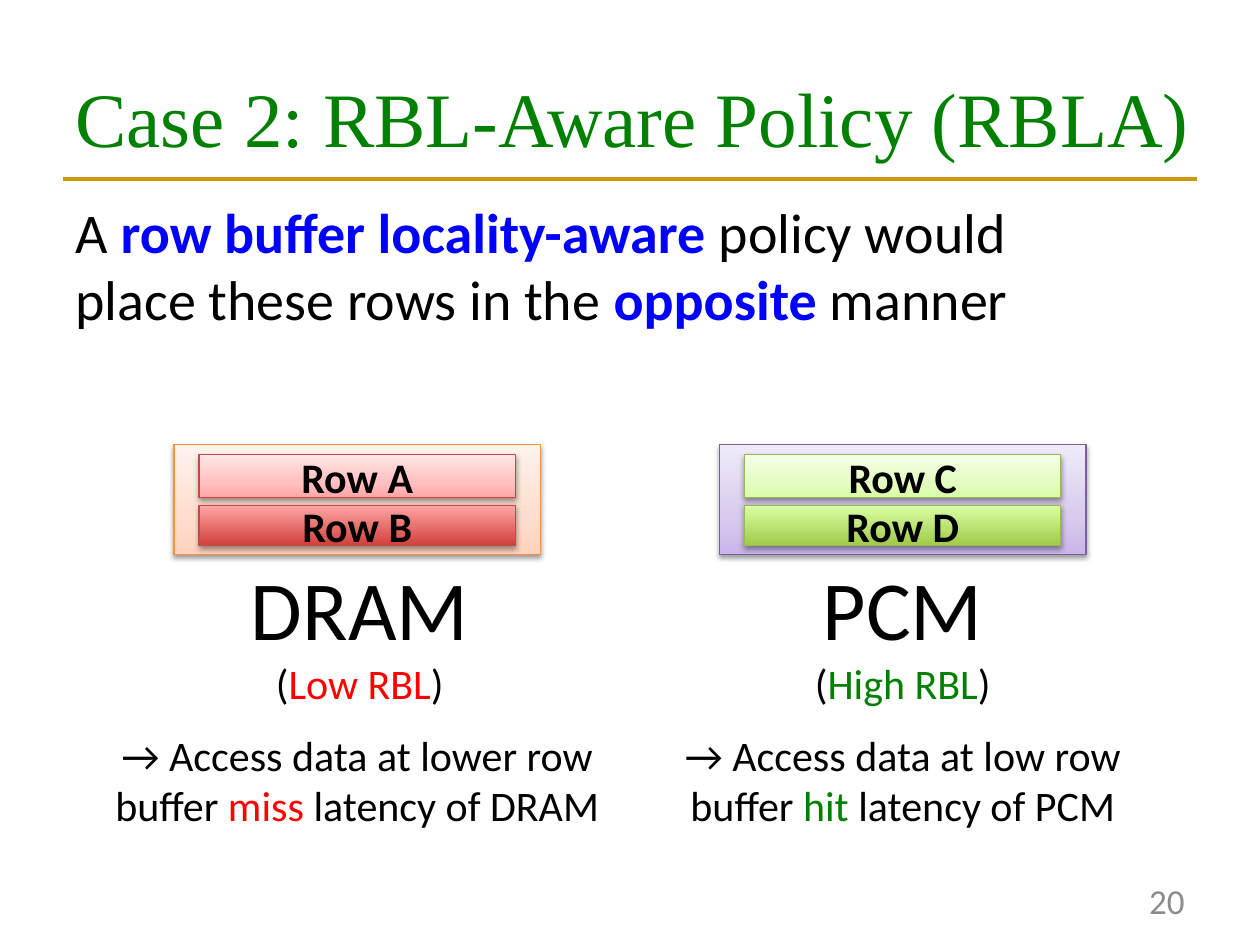
from lxml import etree
from pptx import Presentation
from pptx.dml.color import RGBColor
from pptx.enum.shapes import MSO_CONNECTOR, MSO_SHAPE
from pptx.enum.text import MSO_ANCHOR, MSO_AUTO_SIZE, PP_ALIGN
from pptx.oxml.ns import qn
from pptx.util import Inches, Pt

LEFT, CENTER, RIGHT = PP_ALIGN.LEFT, PP_ALIGN.CENTER, PP_ALIGN.RIGHT
TOP, MIDDLE = MSO_ANCHOR.TOP, MSO_ANCHOR.MIDDLE
NO_FIT = MSO_AUTO_SIZE.NONE
RECT = MSO_SHAPE.RECTANGLE
STRAIGHT = MSO_CONNECTOR.STRAIGHT

BLACK = RGBColor(0x00, 0x00, 0x00)
BLUE = RGBColor(0x00, 0x00, 0xFF)
RED = RGBColor(0xFF, 0x00, 0x00)
GREEN = RGBColor(0x00, 0x80, 0x00)
GRAY = RGBColor(0x8C, 0x8C, 0x8C)
GOLD = RGBColor(0xCC, 0x99, 0x00)
ORANGE_LINE = RGBColor(0xF6, 0x92, 0x40)
PURPLE_LINE = RGBColor(0x7D, 0x60, 0xA0)
RED_LINE = RGBColor(0xBF, 0x4C, 0x48)
GREEN_LINE = RGBColor(0x98, 0xB9, 0x55)


def shades(*codes):
    return [RGBColor.from_string(code) for code in codes]


ORANGE_FILL = shades("FFD2BD", "FFDED0", "FFF2ED")
PURPLE_FILL = shades("C9B5E8", "D8CBEE", "F0EAF9")
PALE_RED_FILL = shades("FFA6A5", "FFC0BF", "FFE7E7")
RED_FILL = shades("D1403C", "FFA6A5")
PALE_GREEN_FILL = shades("DAFDA7", "E4FCC2", "F5FFE7")
GREEN_FILL = shades("A0CA4A", "DAFFA5")


def write(p, text, font="Calibri", size=24, color=BLACK, bold=False):
    for i, line in enumerate(text.split("\n")):
        if i:
            p.add_line_break()
        if line:
            r = p.add_run()
            r.text = line
            r.font.name = font
            r.font.size = Pt(size)
            r.font.color.rgb = color
            r.font.bold = bold


def add_node(parent, tag, **attrs):
    return etree.SubElement(parent, qn(tag), {k: str(v) for k, v in attrs.items()})


class SlideBuilder:
    def __init__(self, s):
        self.s = s

    def title(self, text, x, y, w, h):
        sp = self.s.shapes.title
        sp.left, sp.top, sp.width, sp.height = map(Inches, (x, y, w, h))
        tf = sp.text_frame
        tf.auto_size = NO_FIT
        tf.vertical_anchor = MIDDLE
        p = tf.paragraphs[0]
        p.alignment = LEFT
        write(p, text, font="Times New Roman", size=44, color=GREEN)

    def rule(self, x1, x2, y):
        line = self.s.shapes.add_connector(
            STRAIGHT, Inches(x1), Inches(y), Inches(x2), Inches(y))
        line.line.color.rgb = GOLD
        line.line.width = Pt(2.25)
        add_node(line._element.spPr, "a:effectLst")

    def text(self, x, y, w, h, runs, align=CENTER, anchor=TOP, wrap=True):
        sp = self.s.shapes.add_textbox(Inches(x), Inches(y), Inches(w), Inches(h))
        tf = sp.text_frame
        tf.word_wrap = wrap
        tf.vertical_anchor = anchor
        p = tf.paragraphs[0]
        p.alignment = align
        for text, style in runs:
            write(p, text, **style)

    def box(self, x, y, w, h, colors, line, label=""):
        sp = self.s.shapes.add_shape(RECT, Inches(x), Inches(y), Inches(w), Inches(h))
        self.gradient(sp, colors)
        sp.line.color.rgb = line
        sp.line.width = Pt(0.75)
        self.shadow(sp)
        if label:
            tf = sp.text_frame
            tf.vertical_anchor = MIDDLE
            p = tf.paragraphs[0]
            p.alignment = CENTER
            write(p, label, bold=True)

    def gradient(self, sp, colors):
        sp.fill.gradient()
        sp.fill.gradient_angle = 90
        stops = sp._element.spPr.find(qn("a:gradFill")).find(qn("a:gsLst"))
        for stop in list(stops):
            stops.remove(stop)
        positions = (0, 35, 100) if len(colors) == 3 else (0, 100)
        for position, color in zip(positions, colors):
            stop = add_node(stops, "a:gs", pos=position * 1000)
            add_node(stop, "a:srgbClr", val=color)

    def shadow(self, sp):
        sp.shadow.inherit = False
        effects = sp._element.spPr.find(qn("a:effectLst"))
        outer = add_node(effects, "a:outerShdw", blurRad=Pt(3.1), dist=Pt(1.6),
                         dir=5400000, rotWithShape=0)
        color = add_node(outer, "a:srgbClr", val=BLACK)
        add_node(color, "a:alpha", val=38000)

    def memory(self, x, colors, line, rows, row_line):
        self.box(x, 3.53, 2.91, 0.87, colors, line)
        for (label, fill), (y, h) in zip(rows, ((3.61, 0.34), (4.01, 0.32))):
            self.box(x + 0.2, y, 2.51, h, fill, row_line, label)

    def caption(self, x, w, name, level, color):
        self.text(x, 4.37, w, 1.31, [
            (name + "\n", {"size": 48}), ("(", {}),
            (level, {"color": color}), (")", {})], wrap=False)

    def note(self, x, w, before, word, after, color):
        self.text(x, 5.74, w, 0.91, [
            (before, {}), (word, {"color": color}), (after, {})])


def main():
    prs = Presentation()
    prs.slide_width, prs.slide_height = Inches(10), Inches(7.5)
    b = SlideBuilder(prs.slides.add_slide(prs.slide_layouts[5]))

    b.rule(0.5, 9.5, 1.42)
    b.title("Case 2: RBL-Aware Policy (RBLA)", 0.5, 0.3, 9.5, 1.25)
    b.text(7.17, 6.95, 2.33, 0.4, [("20", {"size": 20, "color": GRAY})],
           align=RIGHT, anchor=MIDDLE)

    plain = {"size": 32}
    strong = {"size": 32, "color": BLUE, "bold": True}
    b.text(0.5, 1.52, 7.72, 1.18, [
        ("A ", plain), ("row buffer locality-aware ", strong),
        ("policy would\nplace these rows in the ", plain),
        ("opposite ", strong), ("manner", plain)], align=LEFT, wrap=False)

    b.caption(1.88, 1.95, "DRAM", "Low RBL", RED)
    b.caption(6.36, 1.61, "PCM", "High RBL", GREEN)
    b.note(0.66, 4.35, "→ Access data at lower row buffer ", "miss",
           " latency of DRAM", RED)
    b.note(5.15, 4.03, "→ Access data at low row buffer ", "hit",
           " latency of PCM", GREEN)

    b.memory(1.38, ORANGE_FILL, ORANGE_LINE,
             [("Row A", PALE_RED_FILL), ("Row B", RED_FILL)], RED_LINE)
    b.memory(5.71, PURPLE_FILL, PURPLE_LINE,
             [("Row C", PALE_GREEN_FILL), ("Row D", GREEN_FILL)], GREEN_LINE)

    prs.save("out.pptx")


if __name__ == "__main__":
    main()
